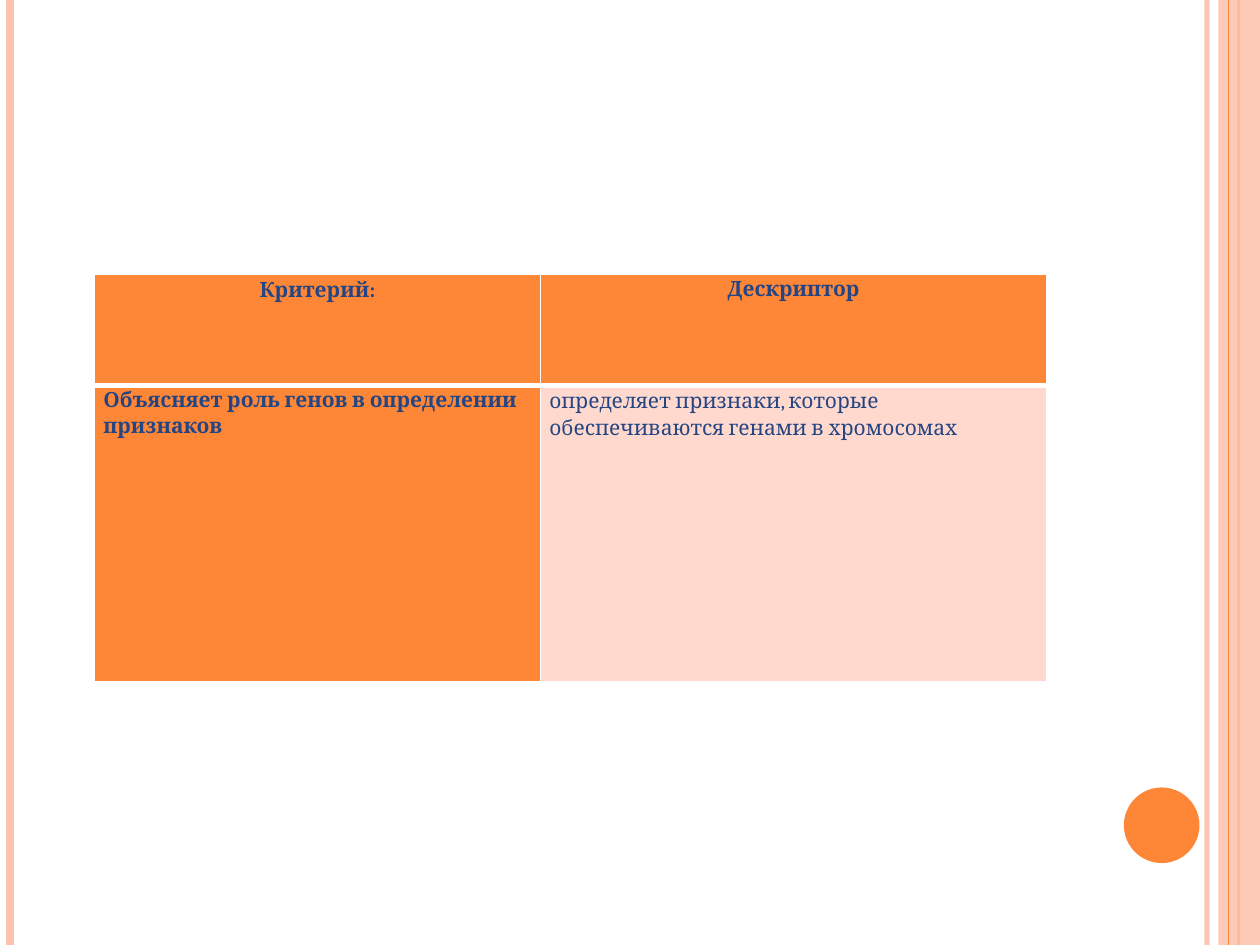
from pptx import Presentation
from pptx.dml.color import RGBColor
from pptx.enum.shapes import MSO_CONNECTOR, MSO_SHAPE
from pptx.enum.text import PP_ALIGN
from pptx.oxml.ns import qn
from pptx.util import Inches, Pt
from lxml import etree

LINE = MSO_CONNECTOR.STRAIGHT
RECT, OVAL = MSO_SHAPE.RECTANGLE, MSO_SHAPE.OVAL
LEFT, MID = PP_ALIGN.LEFT, PP_ALIGN.CENTER

THEME = {"font": "Cambria", "size": 12, "text": "244583", "main": "FE8637",
         "soft": "FEC3AE", "pale": "FFD9CE", "edge": "FFFFFF"}
WIDE, HIGH = 10, 7.5

# Content: text, bold, alignment, fill, line spacing, space after
ROWS = [
    [("Критерий:", True, MID, "main", 1.15, 10),
     ("Дескриптор", True, MID, "main", 1.11, 4.2)],
    [("Объясняет роль генов в определении признаков", True, LEFT, "main", 1.11, 4.2),
     ("определяет признаки, которые обеспечиваются генами в хромосомах",
      False, LEFT, "pale", 1.15, 10)],
]
SPOT = (0.75, 2.18)
COLS, TALL = (3.54, 4.02), (0.88, 2.35)

# Side stripes: x, colour, width, opacity in percent
BACK = [(9.58, "soft", 3, 93), (0.08, "soft", 4.5, 100), (9.83, "main", 1.5, 100)]
FRONT = [(9.75, "main", 0.75, 100)]


def tint(name):
    return RGBColor.from_string(THEME[name])


def fade(part, share):
    if share < 100:
        color = next(part.iter(qn("a:srgbClr")))
        etree.SubElement(color, qn("a:alpha")).set("val", str(share * 1000))


def stripe(slide, x, name, width, share):
    line = slide.shapes.add_connector(LINE, Inches(x), 0, Inches(x), Inches(HIGH))
    line.line.color.rgb = tint(name)
    line.line.width = Pt(width)
    prop = line._element.spPr
    fade(prop, share)
    etree.SubElement(prop, qn("a:effectLst"))


def block(slide, kind, box, name, share=100):
    shape = slide.shapes.add_shape(kind, *map(Inches, box))
    shape.shadow.inherit = False
    shape.fill.solid()
    shape.fill.fore_color.rgb = tint(name)
    shape.line.fill.background()
    fade(shape._element.spPr, share)


def border(cell, widths):
    prop = cell._tc.get_or_add_tcPr()
    for spot, (side, width) in enumerate(widths.items()):
        edge = etree.Element(qn(f"a:{side}"), w=str(Pt(width)))
        fill = etree.SubElement(edge, qn("a:solidFill"))
        etree.SubElement(fill, qn("a:srgbClr"), val=THEME["edge"])
        prop.insert(spot, edge)


def write(cell, text, bold, align, fill, space, after):
    margins = {"margin_left": 0.07, "margin_right": 0.07,
               "margin_top": 0, "margin_bottom": 0}
    for key, value in margins.items():
        setattr(cell, key, Inches(value))
    cell.fill.solid()
    cell.fill.fore_color.rgb = tint(fill)
    para = cell.text_frame.paragraphs[0]
    form = {"alignment": align, "line_spacing": space, "space_after": Pt(after)}
    for key, value in form.items():
        setattr(para, key, value)
    run = para.add_run()
    run.text = text
    form = {"name": THEME["font"], "size": Pt(THEME["size"]), "bold": bold}
    for key, value in form.items():
        setattr(run.font, key, value)
    run.font.color.rgb = tint("text")


def grid(slide):
    size = (sum(COLS), sum(TALL))
    frame = slide.shapes.add_table(len(TALL), len(COLS), *map(Inches, SPOT + size))
    table = frame.table
    for col, width in zip(table.columns, COLS):
        col.width = Inches(width)
    for row, height in zip(table.rows, TALL):
        row.height = Inches(height)
    for r, row in enumerate(ROWS):
        top, low = (1, 3) if r == 0 else (3, 1)
        for c, item in enumerate(row):
            cell = table.cell(r, c)
            write(cell, *item)
            border(cell, {"lnL": 1, "lnR": 1, "lnT": top, "lnB": low})


def main():
    deck = Presentation()
    deck.slide_width, deck.slide_height = Inches(WIDE), Inches(HIGH)
    slide = deck.slides.add_slide(deck.slide_layouts[6])

    # Side decoration
    for item in BACK:
        stripe(slide, *item)
    block(slide, RECT, (9.67, 0, 0.33, HIGH), "soft", 87)
    for item in FRONT:
        stripe(slide, *item)
    block(slide, OVAL, (8.92, 6.25, 0.6, 0.6), "main")

    # Criteria table
    grid(slide)
    deck.save("out.pptx")


if __name__ == "__main__":
    main()
